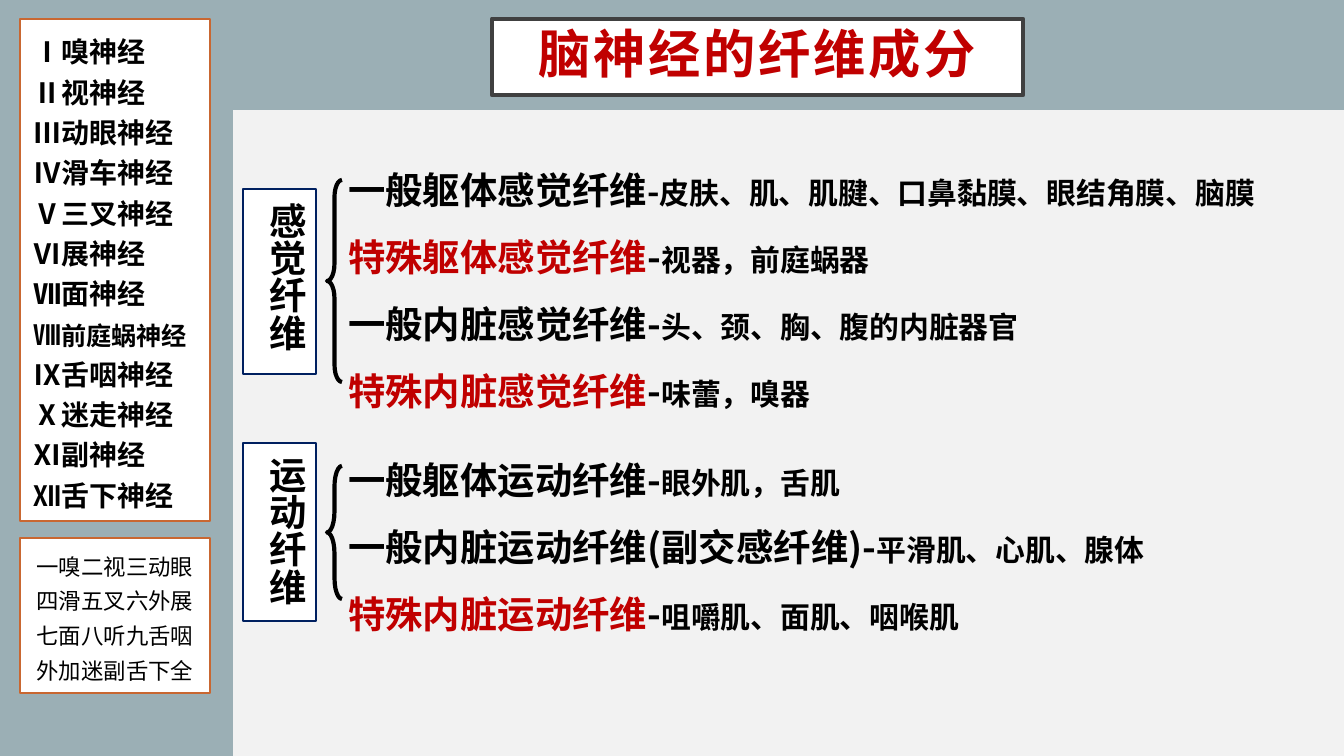
from lxml.etree import SubElement
from pptx import Presentation
from pptx.dml.color import RGBColor
from pptx.enum.shapes import MSO_SHAPE as Shape
from pptx.enum.text import MSO_ANCHOR as Anchor, PP_ALIGN as Align
from pptx.oxml.ns import qn
from pptx.util import Pt

PX = 914400 / 134.4
FONT = "Noto Sans CJK SC"
COLORS = {
    "page": "F2F2F2", "band": "9BAFB5", "white": "FFFFFF", "orange": "C96731",
    "gray": "404040", "navy": "002060", "black": "000000", "red": "C00000",
}


def add_box(kind, left, top, width, height, fill=None, line=None, weight=1):
    """Add a preset shape, placed in px; no fill or line unless named."""
    box = slide.shapes.add_shape(kind, *(round(n * PX) for n in (left, top, width, height)))
    box.shadow.inherit = False
    if fill:
        box.fill.solid()
        box.fill.fore_color.rgb = RGBColor.from_string(COLORS[fill])
    else:
        box.fill.background()
    if line:
        box.line.color.rgb = RGBColor.from_string(COLORS[line])
        box.line.width = Pt(weight)
    else:
        box.line.fill.background()
    return box


def write(box, lines, align=Align.LEFT, spacing=1.0, bold=True, anchor=Anchor.TOP):
    """Fill a box with lines, each a list of (text, size, color) runs."""
    frame = box.text_frame
    frame.word_wrap = True
    frame.vertical_anchor = anchor
    for number, line in enumerate(lines):
        para = frame.add_paragraph() if number else frame.paragraphs[0]
        para.alignment = align
        para.line_spacing = spacing
        for text, size, color in line:
            span = para.add_run()
            span.text = text
            span.font.size = Pt(size)
            span.font.bold = bold
            span.font.name = FONT
            span.font.color.rgb = RGBColor.from_string(COLORS[color])
            SubElement(span.font._element, qn("a:ea")).set("typeface", FONT)


deck = Presentation()
deck.slide_width, deck.slide_height = round(1344 * PX), round(756 * PX)
slide = deck.slides.add_slide(deck.slide_layouts[6])
slide.background.fill.solid()
slide.background.fill.fore_color.rgb = RGBColor.from_string(COLORS["page"])

add_box(Shape.RECTANGLE, 0, 0, 1344, 110, "band")
add_box(Shape.RECTANGLE, 0, 0, 233, 756, "band")

# Sidebar: the twelve nerves and the rhyme
nerves = ["Ⅰ嗅神经", "Ⅱ视神经", "Ⅲ动眼神经", "Ⅳ滑车神经", "Ⅴ三叉神经", "Ⅵ展神经",
          "Ⅶ面神经", "Ⅷ前庭蜗神经", "Ⅸ舌咽神经", "Ⅹ迷走神经", "Ⅺ副神经", "Ⅻ舌下神经"]
nerve_lines = [
    [(name[0], 15, "black"), (name[1:], 13.5 if name[0] == "Ⅷ" else 15, "black")]
    for name in nerves
]
nerve_box = add_box(Shape.RECTANGLE, 20, 19, 190, 502, "white", "orange")
write(nerve_box, nerve_lines, spacing=1.2, anchor=Anchor.MIDDLE)

rhyme = ["一嗅二视三动眼", "四滑五叉六外展", "七面八听九舌咽", "外加迷副舌下全"]
rhyme_box = add_box(Shape.RECTANGLE, 20, 538, 190, 155, "white", "orange")
write(rhyme_box, [[(verse, 12, "black")] for verse in rhyme], Align.CENTER, 1.3, bold=False)

# Title
title = add_box(Shape.RECTANGLE, 492, 19, 531, 76, "white", "gray", 2.5)
frame = title.text_frame
frame.margin_left = frame.margin_right = frame.margin_top = frame.margin_bottom = round(27 * PX)
write(title, [[("脑神经的纤维成分", 28, "red")]], Align.CENTER, 0.9, anchor=Anchor.MIDDLE)
frame.paragraphs[0].runs[0].font._element.set("spc", "150")

# Fiber groups: label, label top and height, brace top, height and curl,
# list top, width and height, rows of (fiber, color, dash size, targets)
groups = [
    ("感觉纤维", 189, 185, 180, 202, 1.15, 138, 988, 285, [
        ("一般躯体感觉纤维", "black", 18, "皮肤、肌、肌腱、口鼻黏膜、眼结角膜、脑膜"),
        ("特殊躯体感觉纤维", "red", 20, "视器，前庭蜗器"),
        ("一般内脏感觉纤维", "black", 20, "头、颈、胸、腹的内脏器官"),
        ("特殊内脏感觉纤维", "red", 20, "味蕾，嗅器"),
    ]),
    ("运动纤维", 443, 178, 466, 133, 1.38, 428, 937, 218, [
        ("一般躯体运动纤维", "black", 20, "眼外肌，舌肌"),
        ("一般内脏运动纤维(副交感纤维)", "black", 20, "平滑肌、心肌、腺体"),
        ("特殊内脏运动纤维", "red", 20, "咀嚼肌、面肌、咽喉肌"),
    ]),
]
for (label, label_top, label_height, brace_top, brace_height, curl,
     list_top, list_width, list_height, rows) in groups:
    label_box = add_box(Shape.RECTANGLE, 243, label_top, 73, label_height, "white", "navy")
    write(label_box, [[(label, 20, "black")]], Align.CENTER)
    label_box.text_frame._txBody.bodyPr.set("vert", "eaVert")

    brace = add_box(Shape.LEFT_BRACE, 327, brace_top, 15, brace_height, None, "black", 2.25)
    brace.adjustments[0] = curl

    fiber_box = slide.shapes.add_textbox(
        *(round(n * PX) for n in (335, list_top, list_width, list_height)))
    write(fiber_box, [
        [(fiber, 20, color), ("-", dash_size, "black"), (targets, 16, "black")]
        for fiber, color, dash_size, targets in rows
    ], spacing=1.5)

deck.save("out.pptx")
